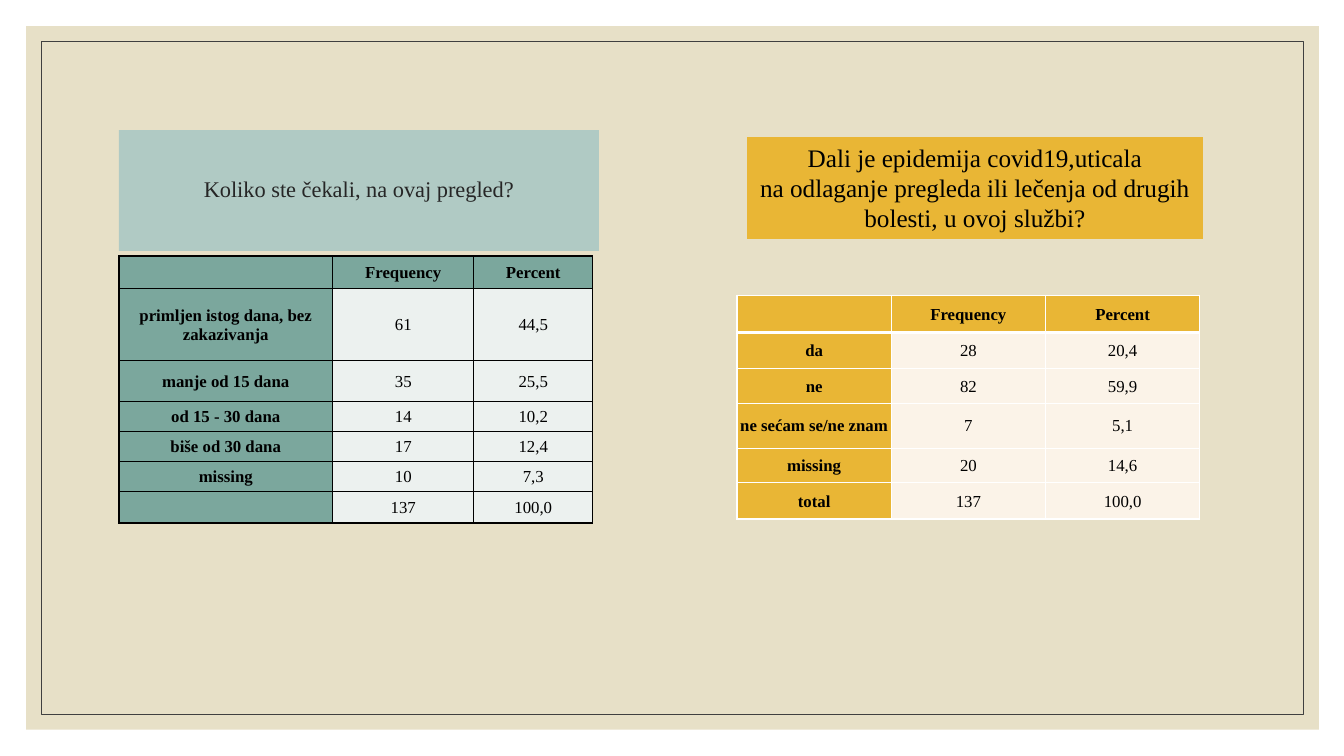
from lxml.etree import SubElement
from pptx import Presentation
from pptx.dml.color import RGBColor
from pptx.enum.shapes import MSO_SHAPE as Shape
from pptx.enum.text import MSO_ANCHOR as Anchor, PP_ALIGN as Align
from pptx.oxml.ns import qn
from pptx.util import Inches, Pt

FONT = "Times New Roman"
BLACK, WHITE = "000000", "FFFFFF"
TEAL, GOLD = "7BA79D", "E9B635"
HEADINGS = ("", "Frequency", "Percent")
CELL_FORMAT = {
    "vertical_anchor": Anchor.MIDDLE,
    "margin_left": Inches(0.01),
    "margin_top": Inches(0.01),
    "margin_right": Inches(0.01),
    "margin_bottom": 0,
}

WAITING = [
    HEADINGS,
    ("primljen istog dana, bez zakazivanja", "61", "44,5"),
    ("manje od 15 dana", "35", "25,5"),
    ("od 15 - 30 dana", "14", "10,2"),
    ("biše od 30 dana", "17", "12,4"),
    ("missing", "10", "7,3"),
    ("", "137", "100,0"),
]
EPIDEMIC = [
    HEADINGS,
    ("da", "28", "20,4"),
    ("ne", "82", "59,9"),
    ("ne sećam se/ne znam", "7", "5,1"),
    ("missing", "20", "14,6"),
    ("total", "137", "100,0"),
]


def rgb(code):
    """Turn a hex string into a colour."""
    return RGBColor.from_string(code)


def apply(target, values):
    """Set each named attribute on the target."""
    for name, value in values.items():
        setattr(target, name, value)


def write(paragraph, text, size, color, bold=False):
    """Add one centred run to a paragraph."""
    paragraph.alignment = Align.CENTER
    run = paragraph.add_run()
    run.text = text
    apply(run.font, {"name": FONT, "size": Pt(size), "bold": bold})
    run.font.color.rgb = rgb(color)


def add_panel(slide, box, fill=None, line=None):
    """Add a flat rectangle with an optional fill and outline."""
    panel = slide.shapes.add_shape(Shape.RECTANGLE, *map(Inches, box))
    panel.shadow.inherit = False
    if fill:
        panel.fill.solid()
        panel.fill.fore_color.rgb = rgb(fill)
    else:
        panel.fill.background()
    if line:
        panel.line.color.rgb = rgb(line)
        panel.line.width = Pt(0.5)
    else:
        panel.line.fill.background()
    return panel


def add_backdrop(slide, box, gap):
    """Add the sand background and the thin frame inside it."""
    left, top, width, height = box
    add_panel(slide, box, fill="E7E0C7")
    inner = (left + gap, top + gap, width - 2 * gap, height - 2 * gap)
    add_panel(slide, inner, line="404040")


def add_question(slide, box, lines, fill, size, color, anchor, spacing):
    """Add a coloured panel that holds a survey question."""
    frame = add_panel(slide, box, fill=fill).text_frame
    apply(frame, {"word_wrap": True, "vertical_anchor": anchor})
    for index, line in enumerate(lines):
        paragraph = frame.add_paragraph() if index else frame.paragraphs[0]
        paragraph.line_spacing = spacing
        write(paragraph, line, size, color)


def add_border(cell, side, color, points):
    """Draw one side of a cell."""
    edge = SubElement(cell._tc.get_or_add_tcPr(), qn(f"a:ln{side}"), w=str(Pt(points)))
    SubElement(SubElement(edge, qn("a:solidFill")), qn("a:srgbClr"), val=color)


def add_answers(slide, box, widths, heights, answers, accent, tint, border, header_rule):
    """Add a frequency table with accented headings."""
    graphic = slide.shapes.add_table(len(answers), len(widths), *map(Inches, box))
    table = graphic.table
    apply(table, {"first_row": False, "horz_banding": False})
    for column, width in zip(table.columns, widths):
        column.width = Inches(width)
    for row, height in zip(table.rows, heights):
        row.height = Inches(height)
    for r, answer in enumerate(answers):
        for c, text in enumerate(answer):
            cell = table.cell(r, c)
            heading = r == 0 or c == 0
            apply(cell, CELL_FORMAT)
            write(cell.text_frame.paragraphs[0], text, 12, BLACK, heading)
            for side in "LRTB":
                under_header = (r, side) in ((0, "B"), (1, "T"))
                add_border(cell, side, border, header_rule if under_header else 1)
            cell.fill.solid()
            cell.fill.fore_color.rgb = rgb(accent if heading else tint)


def main():
    """Build the slide and save it."""
    deck = Presentation()
    apply(deck, {"slide_width": Inches(13.33), "slide_height": Inches(7.5)})
    slide = deck.slides.add_slide(deck.slide_layouts[6])
    add_backdrop(slide, (0.26, 0.26, 12.82, 6.98), 0.15)
    add_question(slide, (1.18, 1.29, 4.76, 1.2),
                 ["Koliko ste čekali, na ovaj pregled?"],
                 "B0CAC4", 16, "262626", Anchor.MIDDLE, 0.9)
    add_answers(slide, (1.18, 2.54, 4.7, 2.64), (2.12, 1.4, 1.18),
                (0.32, 0.72, 0.4, 0.3, 0.3, 0.3, 0.31),
                WAITING, TEAL, "ECF1EF", BLACK, 1)
    add_answers(slide, (7.31, 2.93, 4.6, 2.22), (1.53,) * 3,
                (0.37, 0.36, 0.34, 0.45, 0.34, 0.36),
                EPIDEMIC, GOLD, "FBF3E8", WHITE, 3)
    add_question(slide, (7.41, 1.36, 4.52, 1.01),
                 ["Dali je epidemija covid19,uticala",
                  "na odlaganje pregleda ili lečenja od drugih bolesti, u ovoj službi?"],
                 GOLD, 18, BLACK, Anchor.TOP, 1.0)
    deck.save("out.pptx")


if __name__ == "__main__":
    main()
